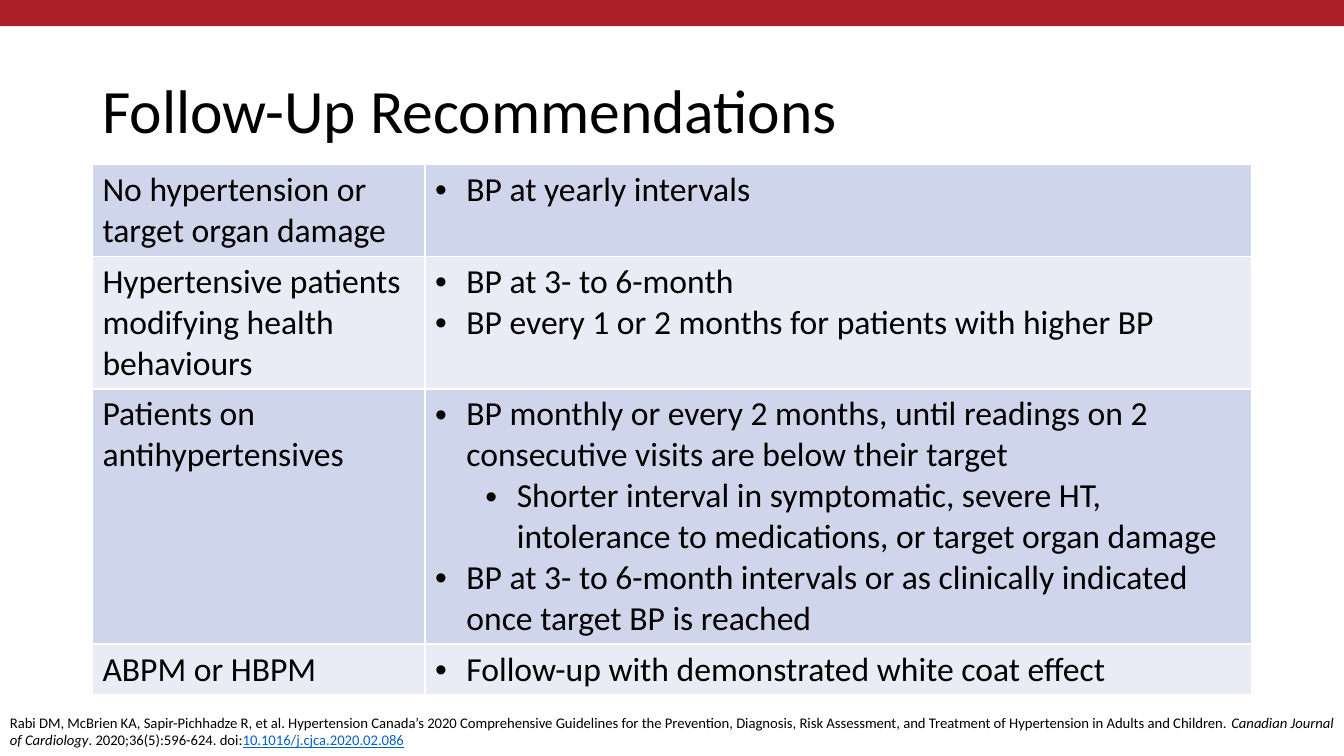
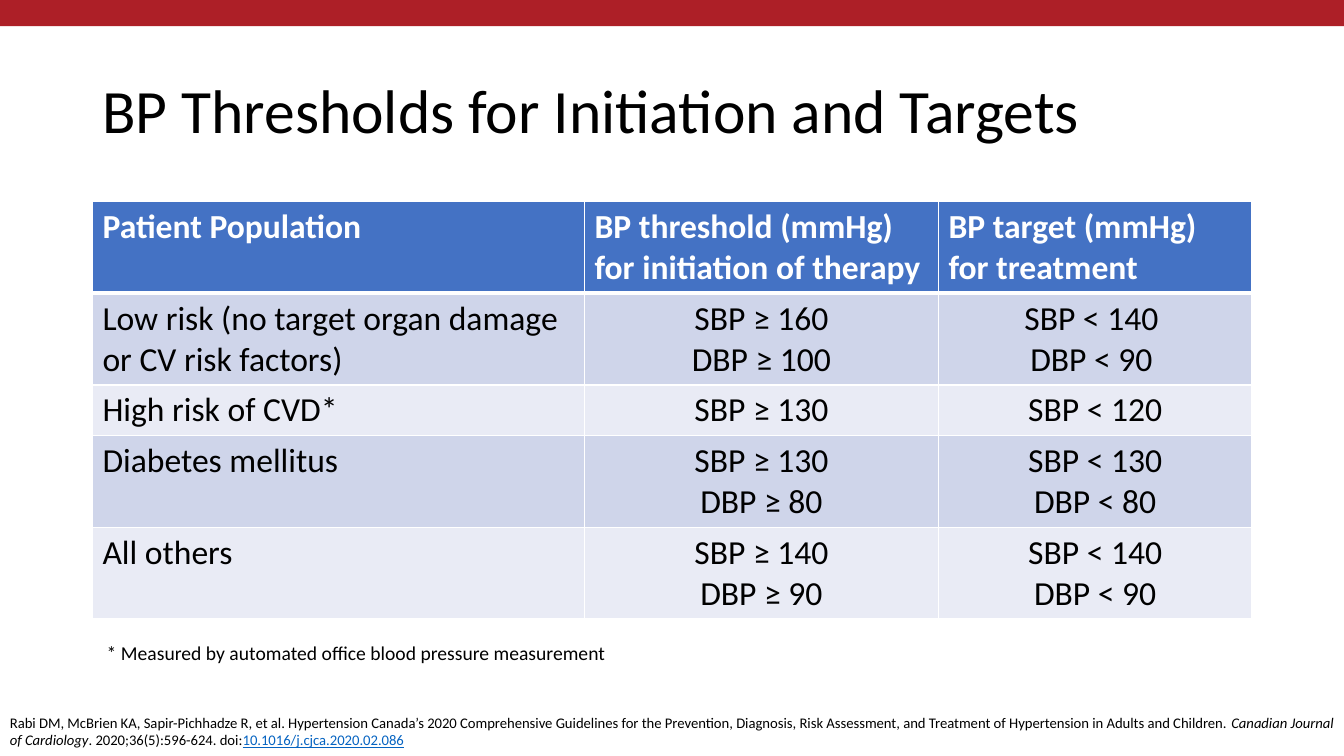
from dataclasses import dataclass

from lxml.etree import SubElement as Sub
from pptx import Presentation
from pptx.dml.color import RGBColor as RGB
from pptx.enum.shapes import MSO_SHAPE as Shape
from pptx.enum.text import MSO_ANCHOR as Anchor, PP_ALIGN as Align
from pptx.oxml.ns import qn
from pptx.util import Cm, Pt

# Shared style
FACE = "Calibri"
BLACK = RGB(0x00, 0x00, 0x00)
WHITE = RGB(0xFF, 0xFF, 0xFF)
RED = RGB(0xAD, 0x1F, 0x27)
BLUE = RGB(0x44, 0x72, 0xC4)
LINK = RGB(0x05, 0x63, 0xC1)
BANDS = (RGB(0xCF, 0xD5, 0xEA), RGB(0xE9, 0xEB, 0xF5))
WIDE, HIGH = 33.87, 19.05
LEFT = 2.33
LINE, PAD = 1.03, 0.25  # table text line and cell padding, in cm


@dataclass
class Box:
    x: float
    y: float
    w: float
    h: float


@dataclass
class Part:
    text: str
    color: RGB = BLACK
    italic: bool = False
    under: bool = False


@dataclass
class Line:
    text: str
    level: int = 0
    bullet: bool = False
    align: Align = Align.LEFT


@dataclass
class Row:
    size: int  # lines of text in the tallest cell
    cells: list[list[Line]]


@dataclass
class Grid:
    top: float
    cols: list[float]
    rows: list[Row]
    head: bool = False


TITLE = Box(LEFT, 1.02, 26.16, 3.68)
NOTE = Box(2.44, 16.03, 26.37, 0.86)
FOOT = Box(0, 17.86, WIDE, 1.19)
SOURCE = [
    Part("Rabi DM, McBrien KA, Sapir-Pichhadze R, et al. Hypertension Canada’s 2020 "
         "Comprehensive Guidelines for the Prevention, Diagnosis, Risk Assessment, and "
         "Treatment of Hypertension in Adults and Children. "),
    Part("Canadian Journal of Cardiology", italic=True),
    Part(". 2020;36(5):596-624. doi:"),
    Part("10.1016/j.cjca.2020.02.086", LINK, under=True),
]


def style(run, size: float, color: RGB = BLACK, bold: bool = False) -> None:
    font = run.font
    font.name, font.size, font.bold = FACE, Pt(size), bold
    font.color.rgb = color


def add_text(slide, box: Box, parts: list[Part], size: float):
    area = slide.shapes.add_textbox(Cm(box.x), Cm(box.y), Cm(box.w), Cm(box.h))
    frame = area.text_frame
    frame.word_wrap = True
    para = frame.paragraphs[0]
    for part in parts:
        run = para.add_run()
        run.text = part.text
        style(run, size, part.color)
        run.font.italic, run.font.underline = part.italic, part.under
    return frame


def add_page(deck, title: str):
    """Add a slide with the red band, title and source line."""
    slide = deck.slides.add_slide(deck.slide_layouts[6])
    band = slide.shapes.add_shape(Shape.RECTANGLE, 0, 0, Cm(WIDE), Cm(0.66))
    band.shadow.inherit = False
    band.fill.solid()
    band.fill.fore_color.rgb = RED
    band.line.fill.background()
    frame = add_text(slide, TITLE, [Part(title)], 44)
    frame.vertical_anchor = Anchor.MIDDLE
    frame.paragraphs[0].line_spacing = 0.9
    add_text(slide, FOOT, SOURCE, 10.5)
    return slide


def add_rule(cell, side: str, width: float) -> None:
    rule = Sub(cell._tc.get_or_add_tcPr(), qn(f"a:ln{side}"), w=str(Pt(width)))
    Sub(Sub(rule, qn("a:solidFill")), qn("a:srgbClr"), val=str(WHITE))


def add_dot(para, level: int) -> None:
    props = para._p.get_or_add_pPr()
    props.set("marL", str(Cm(0.79 + 1.27 * level)))
    props.set("indent", str(-Cm(0.79)))
    Sub(props, qn("a:buFont"), typeface="Arial")
    Sub(props, qn("a:buChar"), char="•")


def fill_cell(cell, lines: list[Line], fill: RGB, color: RGB, bold: bool) -> None:
    cell.fill.solid()
    cell.fill.fore_color.rgb = fill
    frame = cell.text_frame
    frame.text = "\n".join(line.text for line in lines)
    for para, line in zip(frame.paragraphs, lines):
        para.alignment, para.level = line.align, line.level
        if line.bullet:
            add_dot(para, line.level)
        for run in para.runs:
            style(run, 24, color, bold)


def add_grid(slide, grid: Grid) -> None:
    highs = [PAD + LINE * row.size for row in grid.rows]
    table = slide.shapes.add_table(
        len(grid.rows), len(grid.cols), Cm(LEFT), Cm(grid.top),
        Cm(sum(grid.cols)), Cm(sum(highs))).table
    table.first_row, table.horz_banding = grid.head, False
    for col, wide in zip(table.columns, grid.cols):
        col.width = Cm(wide)
    for i, row in enumerate(grid.rows):
        table.rows[i].height = Cm(highs[i])
        head = grid.head and i == 0
        fill = BLUE if head else BANDS[(i - grid.head) % 2]
        above = 3 if grid.head and i == 1 else 1
        for j, lines in enumerate(row.cells):
            cell = table.cell(i, j)
            for side, width in zip("LRTB", (1, 1, above, 3 if head else 1)):
                add_rule(cell, side, width)
            fill_cell(cell, lines, fill, WHITE if head else BLACK, head)


# Cell helpers
def plain(text: str) -> list[Line]:
    return [Line(text)]


def dots(*texts: str) -> list[Line]:
    return [Line(text, bullet=True) for text in texts]


def mid(*texts: str) -> list[Line]:
    return [Line(text, align=Align.CENTER) for text in texts]


# Table contents
VISITS = Grid(4.15, [8.38, 20.83], [
    Row(2, [plain("No hypertension or target organ damage"),
            dots("BP at yearly intervals")]),
    Row(3, [plain("Hypertensive patients modifying health behaviours"),
            dots("BP at 3- to 6-month",
                 "BP every 1 or 2 months for patients with higher BP")]),
    Row(6, [plain("Patients on antihypertensives"), [
        Line("BP monthly or every 2 months, until readings on 2 consecutive visits "
             "are below their target", bullet=True),
        Line("Shorter interval in symptomatic, severe HT, intolerance to medications, "
             "or target organ damage", 1, True),
        Line("BP at 3- to 6-month intervals or as clinically indicated once target BP "
             "is reached", bullet=True)]]),
    Row(1, [plain("ABPM or HBPM"),
            dots("Follow-up with demonstrated white coat effect")]),
])
GOALS = Grid(5.08, [12.4, 8.92, 7.9], [
    Row(2, [plain("Patient Population"),
            plain("BP threshold (mmHg) for initiation of therapy"),
            plain("BP target (mmHg) for treatment")]),
    Row(2, [plain("Low risk (no target organ damage or CV risk factors)"),
            mid("SBP ≥ 160", "DBP ≥ 100"), mid("SBP < 140 ", "DBP < 90 ")]),
    Row(1, [plain("High risk of CVD*"), mid("SBP ≥ 130"), mid("SBP < 120")]),
    Row(2, [plain("Diabetes mellitus"),
            mid("SBP ≥ 130", "DBP ≥ 80"), mid("SBP < 130", "DBP < 80")]),
    Row(2, [plain("All others"),
            mid("SBP ≥ 140", "DBP ≥ 90"), mid("SBP < 140", "DBP < 90")]),
], head=True)


def main() -> None:
    deck = Presentation()
    deck.slide_width, deck.slide_height = Cm(WIDE), Cm(HIGH)

    # Follow-up visits
    add_grid(add_page(deck, "Follow-Up Recommendations"), VISITS)

    # Thresholds and targets
    slide = add_page(deck, "BP Thresholds for Initiation and Targets")
    add_grid(slide, GOALS)
    add_text(slide, NOTE,
             [Part("* Measured by automated office blood pressure measurement")], 14)

    deck.save("out.pptx")


if __name__ == "__main__":
    main()
